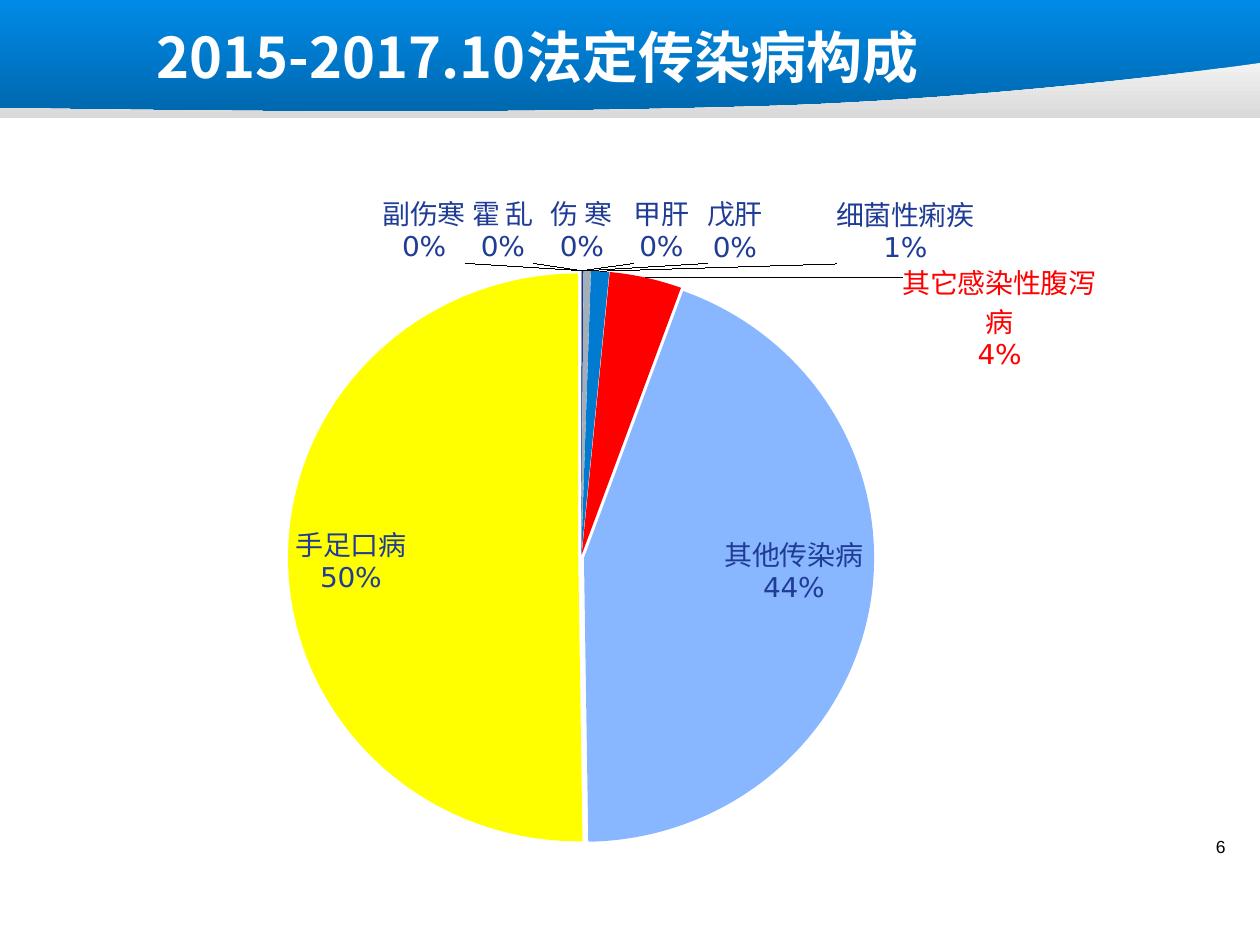
from dataclasses import dataclass

from lxml import etree
from pptx import Presentation
from pptx.chart.data import CategoryChartData
from pptx.dml.color import RGBColor
from pptx.enum.chart import XL_CHART_TYPE, XL_LABEL_POSITION
from pptx.enum.shapes import MSO_SHAPE
from pptx.enum.text import MSO_ANCHOR, PP_ALIGN
from pptx.oxml import parse_xml
from pptx.oxml.ns import nsdecls, qn
from pptx.util import Cm, Pt

PIE = XL_CHART_TYPE.PIE
OUTSIDE, INSIDE = XL_LABEL_POSITION.OUTSIDE_END, XL_LABEL_POSITION.INSIDE_END
RECTANGLE = MSO_SHAPE.RECTANGLE
MIDDLE = MSO_ANCHOR.MIDDLE
LEFT, CENTER = PP_ALIGN.LEFT, PP_ALIGN.CENTER

WHITE = RGBColor(0xFF, 0xFF, 0xFF)
BLACK = RGBColor(0x00, 0x00, 0x00)
BAND_TOP = RGBColor(0x00, 0x8A, 0xE7)
BAND_BOTTOM = RGBColor(0x00, 0x67, 0xAD)
SWOOSH_TOP = RGBColor(0xF2, 0xF2, 0xF2)
SWOOSH_BOTTOM = RGBColor(0xD9, 0xD9, 0xD9)
NAVY = RGBColor(0x20, 0x3C, 0x96)
SLATE = RGBColor(0x73, 0x89, 0x9F)
AZURE = RGBColor(0x00, 0x99, 0xFF)
DARK_BLUE = RGBColor(0x1A, 0x32, 0x7F)
GREY = RGBColor(0xA4, 0xAE, 0xB8)
BLUE = RGBColor(0x00, 0x7B, 0xCF)
RED = RGBColor(0xFF, 0x00, 0x00)
LIGHT_BLUE = RGBColor(0x88, 0xB7, 0xFF)
YELLOW = RGBColor(0xFF, 0xFF, 0x00)

TITLE_FONT, LABEL_FONT, NUMBER_FONT = "Noto Sans CJK SC", "DejaVu Sans", "Arial"
PERCENT_FORMAT = '0"%"'


@dataclass
class Disease:
    name: str
    share: float  # percent; a sliver keeps a rounded 0% slice and its label visible
    color: RGBColor
    position: XL_LABEL_POSITION = OUTSIDE
    shift: tuple[float, float] | None = None  # label offset, share of chart size
    label_color: RGBColor = NAVY


DISEASES = [
    Disease("副伤寒", 0.01, SLATE, shift=(-0.16, 0)),
    Disease("霍 乱", 0.01, AZURE, shift=(-0.08, 0)),
    Disease("伤 寒", 0.01, WHITE, shift=(0, 0)),
    Disease("甲肝", 0.1, DARK_BLUE, shift=(0.08, 0)),
    Disease("戊肝", 0.4, GREY, shift=(0.15, 0)),
    Disease("细菌性痢疾", 1, BLUE, shift=(0.31, 0)),
    Disease("其它感染性腹泻病", 4, RED, shift=(0.26, 0.15), label_color=RED),
    Disease("其他传染病", 44, LIGHT_BLUE, INSIDE),
    Disease("手足口病", 50, YELLOW, INSIDE),
]


def paint_gradient(shape, top: RGBColor, bottom: RGBColor) -> None:
    shape.shadow.inherit = False
    shape.line.fill.background()
    shape.fill.gradient()
    shape.fill.gradient_angle = 270
    for stop, color in zip(shape.fill.gradient_stops, (top, bottom)):
        stop.color.rgb = color


def curve(start, control_a, control_b, end, steps: int = 24) -> list:
    """Points along a cubic Bezier curve, without its start."""
    points = []
    for step in range(1, steps + 1):
        t = step / steps
        weights = ((1 - t) ** 3, 3 * t * (1 - t) ** 2, 3 * t * t * (1 - t), t ** 3)
        corners = (start, control_a, control_b, end)
        points.append(tuple(sum(w * c[axis] for w, c in zip(weights, corners))
                            for axis in (0, 1)))
    return points


def add_header(slide) -> None:
    band = slide.shapes.add_shape(RECTANGLE, 0, 0, Cm(25.4), Cm(2.34))
    paint_gradient(band, BAND_TOP, BAND_BOTTOM)

    start, crest, end = (-0.05, 2.18), (14.73, 2.16), (25.4, 1.27)
    outline = curve(start, (5.87, 2.26), (9.93, 2.29), crest)
    outline += curve(crest, (19.53, 2.06), (24.36, 1.42), end)
    outline += [(25.4, 2.38), (0, 2.38)]
    builder = slide.shapes.build_freeform(Cm(start[0]), Cm(start[1]))
    builder.add_line_segments([(Cm(x), Cm(y)) for x, y in outline], close=True)
    paint_gradient(builder.convert_to_shape(), SWOOSH_TOP, SWOOSH_BOTTOM)


def add_run(paragraph, text: str, size: int, font: str, color: RGBColor,
            bold: bool = False) -> None:
    run = paragraph.add_run()
    run.text = text
    run.font.size, run.font.name, run.font.bold = Pt(size), font, bold
    run.font.color.rgb = color
    east_asian = etree.SubElement(run.font._element, qn("a:ea"))
    east_asian.set("typeface", font)


def add_layout(parent, index: int, modes: str, **values: float) -> None:
    sizes = "".join(f'<c:{key} val="{value}"/>' for key, value in values.items())
    parent.insert(index, parse_xml(
        f'<c:layout {nsdecls("c")}><c:manualLayout>{modes}{sizes}'
        "</c:manualLayout></c:layout>"))


def format_slice(series, index: int, disease: Disease) -> None:
    point = series.points[index]
    point.format.fill.solid()
    point.format.fill.fore_color.rgb = disease.color
    label = point.data_label
    label.font.size, label.font.name = Pt(16), LABEL_FONT
    label.font.color.rgb = disease.label_color
    label.position = disease.position

    # Category name above the percentage, with an optional offset
    element = series._element.xpath(f"c:dLbls/c:dLbl[c:idx/@val='{index}']")[0]
    element.find(qn("c:showCatName")).set("val", "1")
    etree.SubElement(element, qn("c:separator")).text = "\n"
    number_format = etree.Element(qn("c:numFmt"), formatCode=PERCENT_FORMAT,
                                  sourceLinked="0")
    element.insert(1, number_format)
    if disease.shift:
        add_layout(element, 1, "", x=disease.shift[0], y=disease.shift[1])


def add_pie(slide) -> None:
    data = CategoryChartData(number_format=PERCENT_FORMAT)
    data.categories = [disease.name for disease in DISEASES]
    data.add_series("Series 1", [disease.share for disease in DISEASES])
    chart = slide.shapes.add_chart(PIE, Cm(2.9), Cm(3.28), Cm(19.81), Cm(13.74),
                                   data).chart
    chart.has_legend = chart.has_title = False
    chart.font.size, chart.font.name = Pt(10), LABEL_FONT
    chart.font.color.rgb = NAVY
    plot = chart.plots[0]
    plot.vary_by_categories = True
    series = plot.series[0]
    for index, disease in enumerate(DISEASES):
        format_slice(series, index, disease)

    # Slices slightly apart
    explosion = etree.Element(qn("c:explosion"), val="1")
    series._element.find(qn("c:dPt")).addprevious(explosion)

    plot_area = chart._chartSpace.chart.plotArea
    for layout in plot_area.findall(qn("c:layout")):
        plot_area.remove(layout)
    add_layout(plot_area, 0, '<c:layoutTarget val="inner"/><c:xMode val="edge"/>'
               '<c:yMode val="edge"/>', x=0.07, y=0.14, w=0.75, h=0.86)


def main() -> None:
    deck = Presentation()
    deck.slide_width, deck.slide_height = Cm(25.4), Cm(19.05)
    slide = deck.slides.add_slide(deck.slide_layouts[5])
    add_header(slide)

    # Title, in front of the header band
    title = slide.shapes.title
    title.left, title.top, title.width, title.height = (
        Cm(2.9), Cm(0.34), Cm(21.23), Cm(1.57))
    title.text_frame.vertical_anchor = MIDDLE
    heading = title.text_frame.paragraphs[0]
    heading.alignment = LEFT
    add_run(heading, "2015-2017.10法定传染病构成", 32, TITLE_FONT, WHITE, bold=True)
    slide.shapes._spTree.append(title._element)

    # Page number
    page_box = slide.shapes.add_textbox(Cm(22.91), Cm(16.72), Cm(3.4), Cm(0.99))
    page_box.text_frame.word_wrap = True
    page_number = page_box.text_frame.paragraphs[0]
    page_number.alignment = CENTER
    add_run(page_number, "6", 10, NUMBER_FONT, BLACK)

    add_pie(slide)
    deck.save("out.pptx")


if __name__ == "__main__":
    main()
